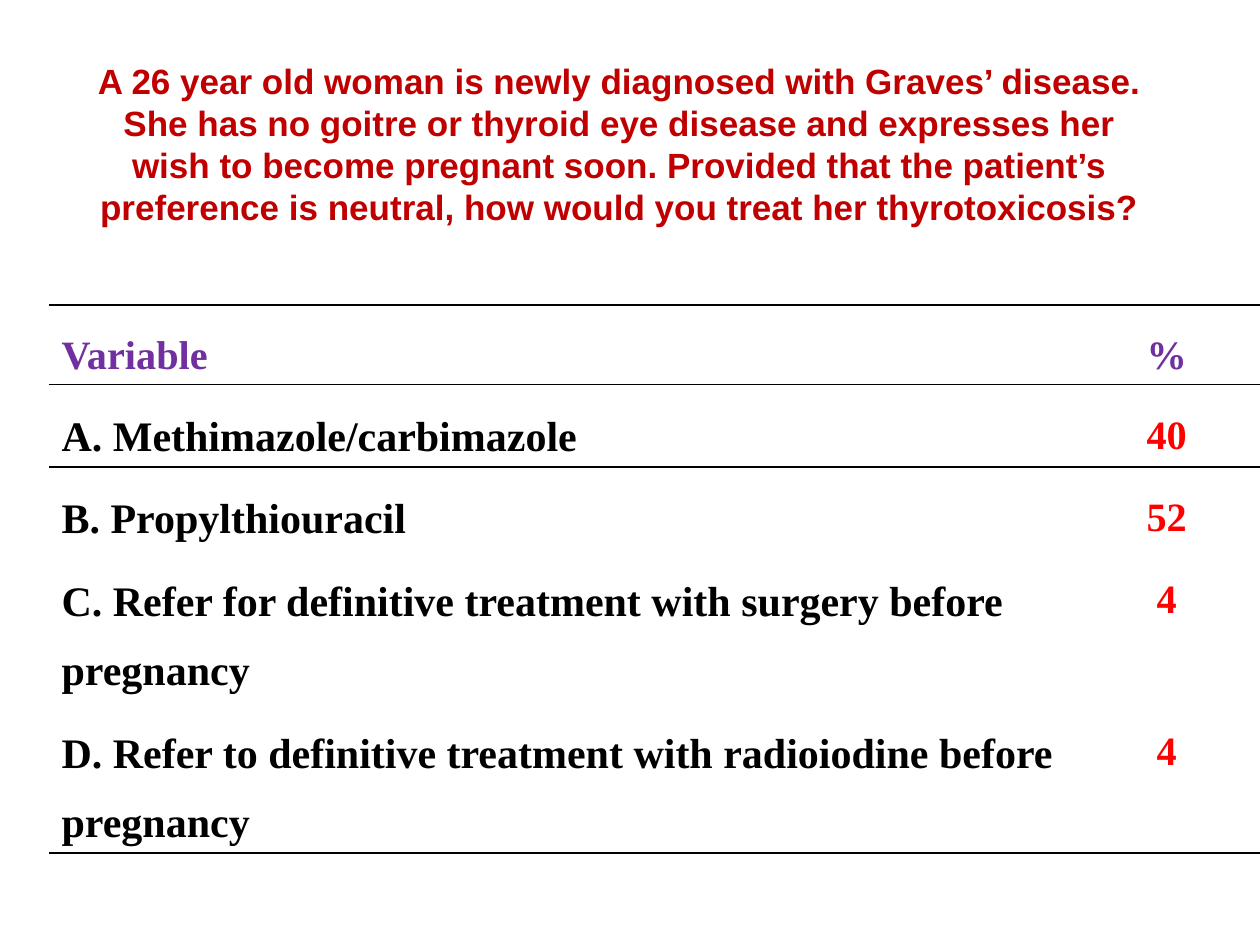
import pptx
import pptx.util
import pptx.dml.color
import pptx.enum.text
import pptx.oxml
import pptx.oxml.ns

Pt = pptx.util.Pt
ALIGN = pptx.enum.text.PP_ALIGN

COLOURS = {"title": "C00000", "header": "7030A0", "option": "000000",
           "percent": "FF0000", "rule": "000000"}
QUESTION = ("A 26 year old woman is newly diagnosed with Graves’ disease. She has no "
            "goitre or thyroid eye disease and expresses her wish to become pregnant "
            "soon. Provided that the patient’s preference is neutral, how would you "
            "treat her thyrotoxicosis?")
ROWS = [
    ("Variable", "%"),
    ("A. Methimazole/carbimazole", "40"),
    ("B. Propylthiouracil", "52"),
    ("C. Refer for definitive treatment with surgery before pregnancy", "4"),
    ("D. Refer to definitive treatment with radioiodine before pregnancy", "4"),
]
COLUMN_WIDTHS = (585.4, 106.6)
ROW_HEIGHT = 29.5  # minimum; rows grow to hold their text
RULE_POSITIONS = {0, 1, 2, len(ROWS)}  # rules lie above these row numbers
HANGING_INDENT = Pt(40.3)


def style(paragraph, font_name, size, colour, alignment):
    paragraph.alignment = alignment
    font = paragraph.font
    font.name, font.size, font.bold = font_name, Pt(size), True
    font.color.rgb = pptx.dml.color.RGBColor.from_string(COLOURS[colour])


def set_borders(cell, row):
    """Draw the horizontal rules that touch this row and clear the other sides."""
    ruled = {"T": row in RULE_POSITIONS, "B": row + 1 in RULE_POSITIONS}
    properties = cell._tc.get_or_add_tcPr()
    for side in "LRTB":
        fill = "<a:noFill/>"
        if ruled.get(side):
            fill = f'<a:solidFill><a:srgbClr val="{COLOURS["rule"]}"/></a:solidFill>'
        properties.append(pptx.oxml.parse_xml(
            f'<a:ln{side} {pptx.oxml.ns.nsdecls("a")} w="{Pt(1)}">{fill}</a:ln{side}>'))


def add_question(slide):
    box = slide.shapes.add_textbox(Pt(48), Pt(12), Pt(612), Pt(140))
    frame = box.text_frame
    frame.word_wrap = True
    frame.vertical_anchor = pptx.enum.text.MSO_ANCHOR.MIDDLE
    frame.text = QUESTION
    style(frame.paragraphs[0], "Arial", 20, "title", ALIGN.CENTER)


def add_answers(slide):
    table = slide.shapes.add_table(
        len(ROWS), len(COLUMN_WIDTHS), Pt(28), Pt(174.2),
        Pt(sum(COLUMN_WIDTHS)), Pt(ROW_HEIGHT * len(ROWS))).table
    table.first_row = table.horz_banding = False
    for column, width in zip(table.columns, COLUMN_WIDTHS):
        column.width = Pt(width)
    for row, texts in enumerate(ROWS):
        for column, text in enumerate(texts):
            cell = table.cell(row, column)
            set_borders(cell, row)
            cell.fill.background()
            cell.text = text
            paragraph = cell.text_frame.paragraphs[0]
            paragraph.line_spacing = 1.5
            is_option = row > 0 and column == 0
            colour = "header" if row == 0 else "option" if is_option else "percent"
            style(paragraph, "Times New Roman", 24 if is_option else 23, colour,
                  ALIGN.CENTER if column else ALIGN.LEFT)
    first_option = table.cell(1, 0).text_frame.paragraphs[0]
    first_option.alignment = ALIGN.JUSTIFY
    properties = first_option._p.get_or_add_pPr()
    properties.set("marL", str(HANGING_INDENT))
    properties.set("indent", str(-HANGING_INDENT))


def main():
    presentation = pptx.Presentation()
    presentation.slide_width, presentation.slide_height = Pt(720), Pt(540)
    slide = presentation.slides.add_slide(presentation.slide_layouts[6])
    add_answers(slide)
    add_question(slide)
    presentation.save("out.pptx")


if __name__ == "__main__":
    main()
